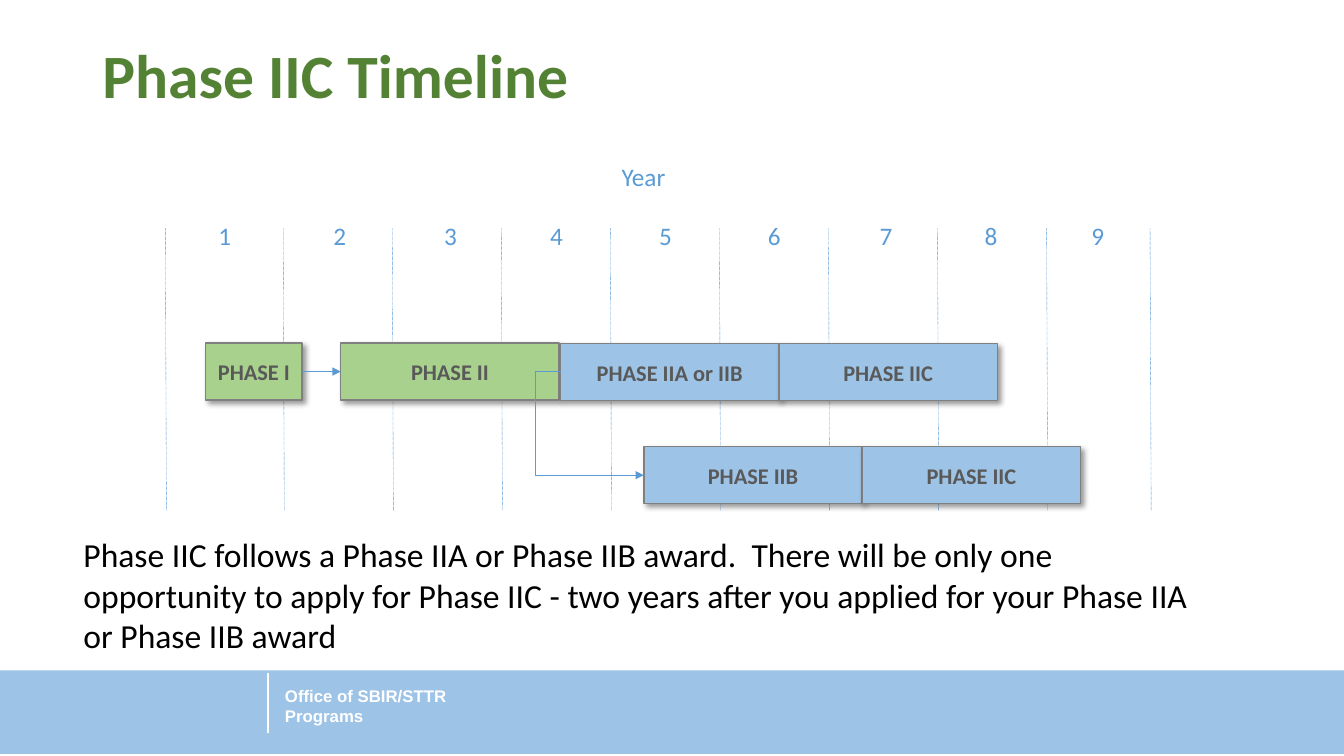
from collections import namedtuple
from dataclasses import dataclass

from lxml.etree import SubElement
from pptx import Presentation
from pptx.dml.color import RGBColor
from pptx.enum.dml import MSO_LINE
from pptx.enum.shapes import MSO_CONNECTOR, MSO_SHAPE
from pptx.enum.text import MSO_ANCHOR, MSO_AUTO_SIZE, PP_ALIGN
from pptx.oxml.ns import qn
from pptx.util import Pt

Box = namedtuple("Box", "x y w h")


@dataclass(frozen=True)
class Theme:
    font: str = "Calibri"
    footer_font: str = "Arial"
    title: str = "548235"
    axis: str = "5B9BD5"
    early: str = "A9D18E"
    late: str = "9DC3E6"
    outline: str = "808080"
    bar_text: str = "595959"
    black: str = "000000"
    white: str = "FFFFFF"
    title_size: int = 44
    body_size: int = 24
    axis_size: int = 18
    bar_size: int = 16
    footer_size: int = 12


THEME = Theme()


def rgb(value):
    return RGBColor.from_string(value)


def write(s, text, size, color, font=THEME.font, bold=False,
          align=PP_ALIGN.LEFT, anchor=MSO_ANCHOR.TOP):
    tf = s.text_frame
    tf.word_wrap = True
    tf.auto_size = MSO_AUTO_SIZE.NONE
    tf.vertical_anchor = anchor
    tf.text = text
    p = tf.paragraphs[0]
    p.alignment = align
    r = p.runs[0]
    r.font.name, r.font.size, r.font.bold = font, Pt(size), bold
    r.font.color.rgb = rgb(color)
    return p


def add_text(slide, box, text, size, color, **style):
    write(slide.shapes.add_textbox(*map(Pt, box)), text, size, color, **style)


def add_rect(slide, box, fill):
    s = slide.shapes.add_shape(MSO_SHAPE.RECTANGLE, *map(Pt, box))
    s.shadow.inherit = False
    s.fill.solid()
    s.fill.fore_color.rgb = rgb(fill)
    s.line.fill.background()
    return s


def add_line(slide, start, end, color, width, kind=MSO_CONNECTOR.STRAIGHT):
    c = slide.shapes.add_connector(kind, *map(Pt, (*start, *end)))
    c.line.color.rgb = rgb(color)
    c.line.width = Pt(width)
    SubElement(c.element.spPr, qn("a:effectLst"))
    return c


def add_arrow(slide, start, end, bend):
    c = add_line(slide, start, end, THEME.axis, 0.5, MSO_CONNECTOR.ELBOW)
    SubElement(c.line._get_or_add_ln(), qn("a:tailEnd"), type="triangle")
    geom = c.element.spPr.find(qn("a:prstGeom"))
    guides = geom.find(qn("a:avLst"))
    if guides is None:
        guides = SubElement(geom, qn("a:avLst"))
    SubElement(guides, qn("a:gd"), name="adj1", fmla=f"val {round(bend * 100000)}")


def add_shadow(s):
    effects = s.element.spPr.find(qn("a:effectLst"))
    shadow = SubElement(effects, qn("a:outerShdw"), blurRad=str(Pt(4)),
                        dist=str(Pt(3)), dir=str(45 * 60000),
                        algn="tl", rotWithShape="0")
    color = SubElement(shadow, qn("a:srgbClr"), val=THEME.black)
    SubElement(color, qn("a:alpha"), val="40000")


def add_footer(slide, box):
    add_rect(slide, box, THEME.late)
    x = box.x + 191.5
    add_line(slide, (x, box.y + 2), (x, box.y + 44.5), THEME.white, 1)
    add_text(slide, Box(x + 5, box.y + 6.5, 152, 37.5), "Office of SBIR/STTR Programs",
             THEME.footer_size, THEME.white, font=THEME.footer_font, bold=True,
             anchor=MSO_ANCHOR.MIDDLE)


def add_title(slide, box):
    s = slide.shapes.title
    s.left, s.top, s.width, s.height = map(Pt, box)
    p = write(s, "Phase IIC Timeline", THEME.title_size, THEME.title, bold=True)
    p.line_spacing = 0.9


def add_years(slide, box):
    label_w, slant, step = 65, 0.8, 77.9
    edges = [0] + [84.2 + step * i for i in range(8)] + [box.w]
    for edge in edges:
        x = box.x + edge
        c = add_line(slide, (x, box.y), (x + slant, box.y + box.h), THEME.axis, 0.25)
        c.line.dash_style = MSO_LINE.ROUND_DOT
    centres = [42.5, 124.5, 203.7, 279.4, 357.2, 434.9, 514.8, 589.7, 666]
    for year, centre in enumerate(centres, 1):
        add_text(slide, Box(box.x + centre - label_w / 2, box.y - 9.5, label_w, 26.5),
                 str(year), THEME.axis_size, THEME.axis, align=PP_ALIGN.CENTER)
    add_text(slide, Box(box.x + 309, box.y - 51.5, label_w, 36), "Year",
             THEME.axis_size, THEME.axis, align=PP_ALIGN.CENTER)


def add_phases(slide, box):
    bar_h, bar_w, drop = 40.8, 156, 74
    second, third, lower = 96.5, 253.5, 313
    bars = [
        ("PHASE I", 0, 0, 69, THEME.early),
        ("PHASE II", second, 0, bar_w, THEME.early),
        ("PHASE IIA or IIB", third, 0.5, bar_w, THEME.late),
        ("PHASE IIC", third + bar_w, 0.5, bar_w, THEME.late),
        ("PHASE IIB", lower, drop, bar_w, THEME.late),
        ("PHASE IIC", lower + bar_w, drop, bar_w, THEME.late),
    ]
    for text, x, y, w, fill in bars:
        s = add_rect(slide, Box(box.x + x, box.y + y, w, bar_h), fill)
        s.line.color.rgb = rgb(THEME.outline)
        s.line.width = Pt(1)
        add_shadow(s)
        write(s, text, THEME.bar_size, THEME.bar_text, bold=True,
              align=PP_ALIGN.CENTER, anchor=MSO_ANCHOR.MIDDLE)
    mid = box.y + bar_h / 2
    add_arrow(slide, (box.x + 69, mid), (box.x + second, mid), 0.5)
    add_arrow(slide, (box.x + third, mid), (box.x + lower, mid + drop), -0.3)


def add_summary(slide, box):
    add_text(slide, box,
             "Phase IIC follows a Phase IIA or Phase IIB award.  There will be only one "
             "opportunity to apply for Phase IIC - two years after you applied for your "
             "Phase IIA or Phase IIB award", THEME.body_size, THEME.black)


def main():
    prs = Presentation()
    prs.slide_width, prs.slide_height = Pt(960), Pt(540)
    slide = prs.slides.add_slide(prs.slide_layouts[5])
    add_footer(slide, Box(0, 478.8, 960, 59.8))
    add_title(slide, Box(66, 29, 828, 104.4))
    add_years(slide, Box(118.1, 163, 703.4, 202))
    add_phases(slide, Box(146.9, 245, 626, 115))
    add_summary(slide, Box(52.5, 378, 816, 94.5))
    prs.save("out.pptx")


if __name__ == "__main__":
    main()
